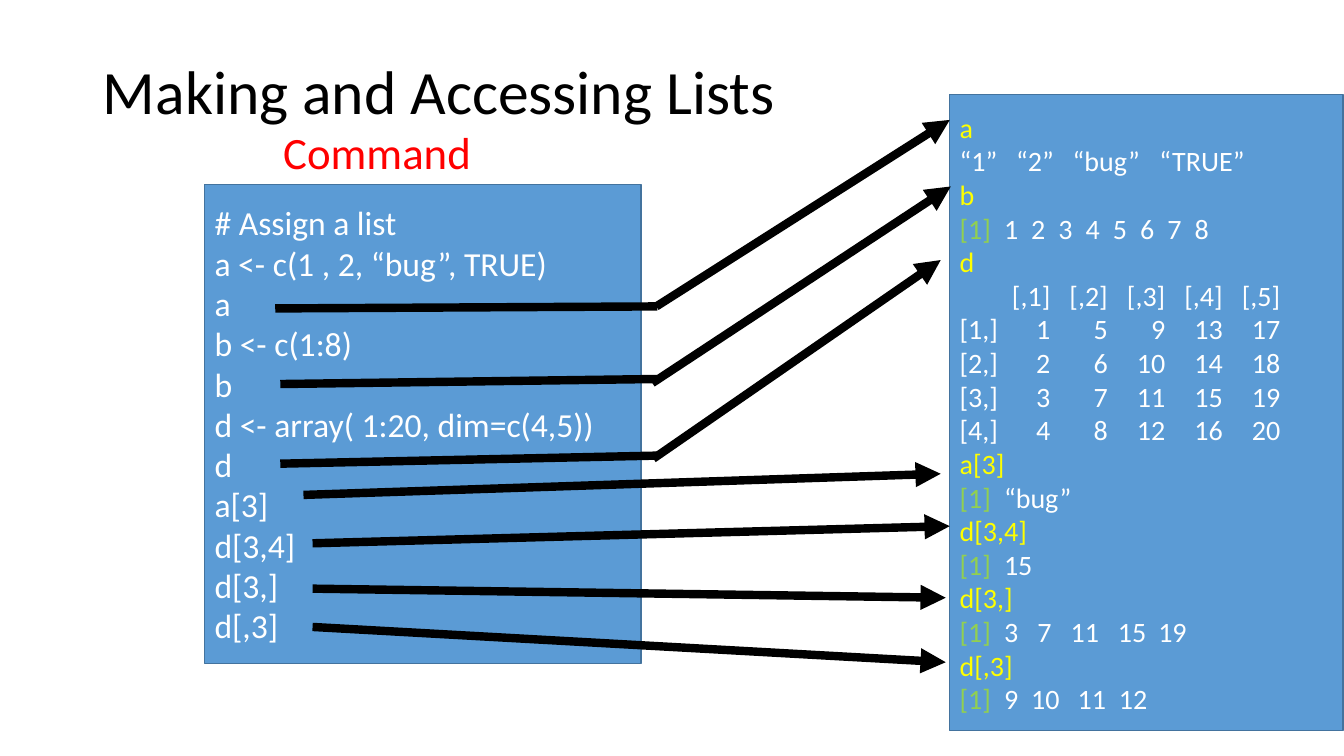
from lxml import etree
from pptx import Presentation
from pptx.dml.color import RGBColor
from pptx.enum.shapes import MSO_CONNECTOR, MSO_SHAPE
from pptx.enum.text import MSO_ANCHOR, MSO_AUTO_SIZE, PP_ALIGN
from pptx.oxml.ns import qn
from pptx.util import Inches, Pt

STRAIGHT, RECT = MSO_CONNECTOR.STRAIGHT, MSO_SHAPE.RECTANGLE
MIDDLE, LEFT = MSO_ANCHOR.MIDDLE, PP_ALIGN.LEFT
NO_FIT, GROW = MSO_AUTO_SIZE.NONE, MSO_AUTO_SIZE.SHAPE_TO_FIT_TEXT

COLORS = {"black": "000000", "white": "FFFFFF", "panel": "5B9BD5", "border": "43739E",
          "label": "FF0000", "echo": "FFFF00", "index": "92D050"}
FONT = "Calibri"

COMMANDS = ["# Assign a list", "a <- c(1 , 2, “bug”, TRUE)", "a", "b <- c(1:8)", "b",
            "d <- array( 1:20, dim=c(4,5))", "d", "a[3]", "d[3,4]", "d[3,]", "d[,3]"]

# Tab stops in inches from the left edge of the text
MATRIX_STOPS = [0.9 + 0.57 * i for i in range(5)]
INDEX_STOP = 0.44
MATRIX = [["", *(f"[,{c}]" for c in range(1, 6))]]
MATRIX += [[f"[{r},]", *(str(r + 4 * c) for c in range(5))] for r in range(1, 5)]

# Echoed command, then its printed vector and the tab stops of the values
VECTORS = {
    "b": ([str(n) for n in range(1, 9)], [INDEX_STOP + 0.27 * i for i in range(8)]),
    "a[3]": (["“bug”"], [INDEX_STOP]),
    "d[3,4]": (["15"], [INDEX_STOP]),
    "d[3,]": (["3", "7", "11", "15", "19"], [INDEX_STOP, 0.77, 1.1, 1.57, 1.97]),
    "d[,3]": (["9", "10", "11", "12"], [INDEX_STOP, 0.71, 1.17, 1.58]),
}

ARROWS = [
    ((6.51, 3.04), (9.42, 1.19)),
    ((6.47, 3.8), (9.43, 1.85)),
    ((6.48, 4.55), (9.33, 2.58)),
    ((3.01, 4.91), (9.33, 4.7)),
    ((3.1, 6.22), (9.38, 6.57)),
    ((3.1, 5.39), (9.42, 5.22)),
    ((3.1, 5.84), (9.38, 5.93)),
]
STEMS = [
    ((2.73, 3.06), (6.52, 3.04)),
    ((2.78, 3.81), (6.52, 3.76)),
    ((2.78, 4.6), (6.53, 4.52)),
]


def rgb(name):
    return RGBColor.from_string(COLORS[name])


def format_run(r, size, color):
    r.font.name = FONT
    r.font.size = Pt(size)
    r.font.color.rgb = rgb(color)


def add_title(s, box):
    title = s.shapes.title
    title.left, title.top, title.width, title.height = map(Inches, box)
    tf = title.text_frame
    tf.text = "Making and Accessing Lists"
    tf.auto_size = NO_FIT
    tf.vertical_anchor = MIDDLE
    p = tf.paragraphs[0]
    p.alignment = LEFT
    p.line_spacing = 0.9
    format_run(p.runs[0], 44, "black")


def add_label(s, box):
    sp = s.shapes.add_textbox(*map(Inches, box))
    tf = sp.text_frame
    tf.text = "Command"
    tf.word_wrap = False
    tf.auto_size = GROW
    format_run(tf.paragraphs[0].runs[0], 32, "label")


def set_tabs(p, stops, align):
    tabs = etree.SubElement(p._p.get_or_add_pPr(), qn("a:tabLst"))
    for stop in stops:
        etree.SubElement(tabs, qn("a:tab"), pos=str(Inches(stop)), algn=align)


def add_panel(s, box, lines, size):
    """Draw a box of lines, each given as (runs, tab stops, tab alignment)."""
    sp = s.shapes.add_shape(RECT, *map(Inches, box))
    sp.shadow.inherit = False
    sp.fill.solid()
    sp.fill.fore_color.rgb = rgb("panel")
    sp.line.color.rgb = rgb("border")
    sp.line.width = Pt(1)
    tf = sp.text_frame
    tf.word_wrap = True
    tf.vertical_anchor = MIDDLE
    for i, (runs, stops, align) in enumerate(lines):
        p = tf.add_paragraph() if i else tf.paragraphs[0]
        p.alignment = LEFT
        if stops:
            set_tabs(p, stops, align)
        for text, color in runs:
            r = p.add_run()
            r.text = text
            format_run(r, size, color)


def plain_line(text, color="white", stops=(), align="l"):
    return [(text, color)], stops, align


def vector_lines(name):
    values, stops = VECTORS[name]
    return [plain_line(name, "echo"),
            ([("[1]\t", "index"), ("\t".join(values), "white")], stops, "l")]


def output_lines():
    lines = [plain_line("a", "echo"),
             plain_line("“1”\t“2”\t“bug”\t“TRUE”", stops=[0.56, 1.12, 1.98])]
    lines += vector_lines("b")
    lines.append(plain_line("d", "echo"))
    lines += [plain_line("\t".join(row), stops=MATRIX_STOPS, align="r") for row in MATRIX]
    for name in ("a[3]", "d[3,4]", "d[3,]", "d[,3]"):
        lines += vector_lines(name)
    return lines


def add_line(s, start, end, arrow=False):
    cxn = s.shapes.add_connector(STRAIGHT, *map(Inches, (*start, *end)))
    cxn.line.color.rgb = rgb("black")
    cxn.line.width = Pt(6)
    if arrow:
        etree.SubElement(cxn.line._get_or_add_ln(), qn("a:tailEnd"), type="triangle")
    etree.SubElement(cxn._element.spPr, qn("a:effectLst"))


def main():
    prs = Presentation()
    prs.slide_width, prs.slide_height = Inches(13.33), Inches(7.5)
    s = prs.slides.add_slide(prs.slide_layouts[5])
    add_title(s, (0.92, 0.21, 11.5, 1.45))
    add_panel(s, (2.03, 1.83, 4.33, 4.75), [plain_line(c) for c in COMMANDS], 24)
    add_panel(s, (9.42, 0.94, 3.9, 6.31), output_lines(), 20)
    add_label(s, (2.71, 1.19, 2.09, 0.64))
    for start, end in ARROWS:
        add_line(s, start, end, arrow=True)
    for start, end in STEMS:
        add_line(s, start, end)
    prs.save("out.pptx")


if __name__ == "__main__":
    main()
